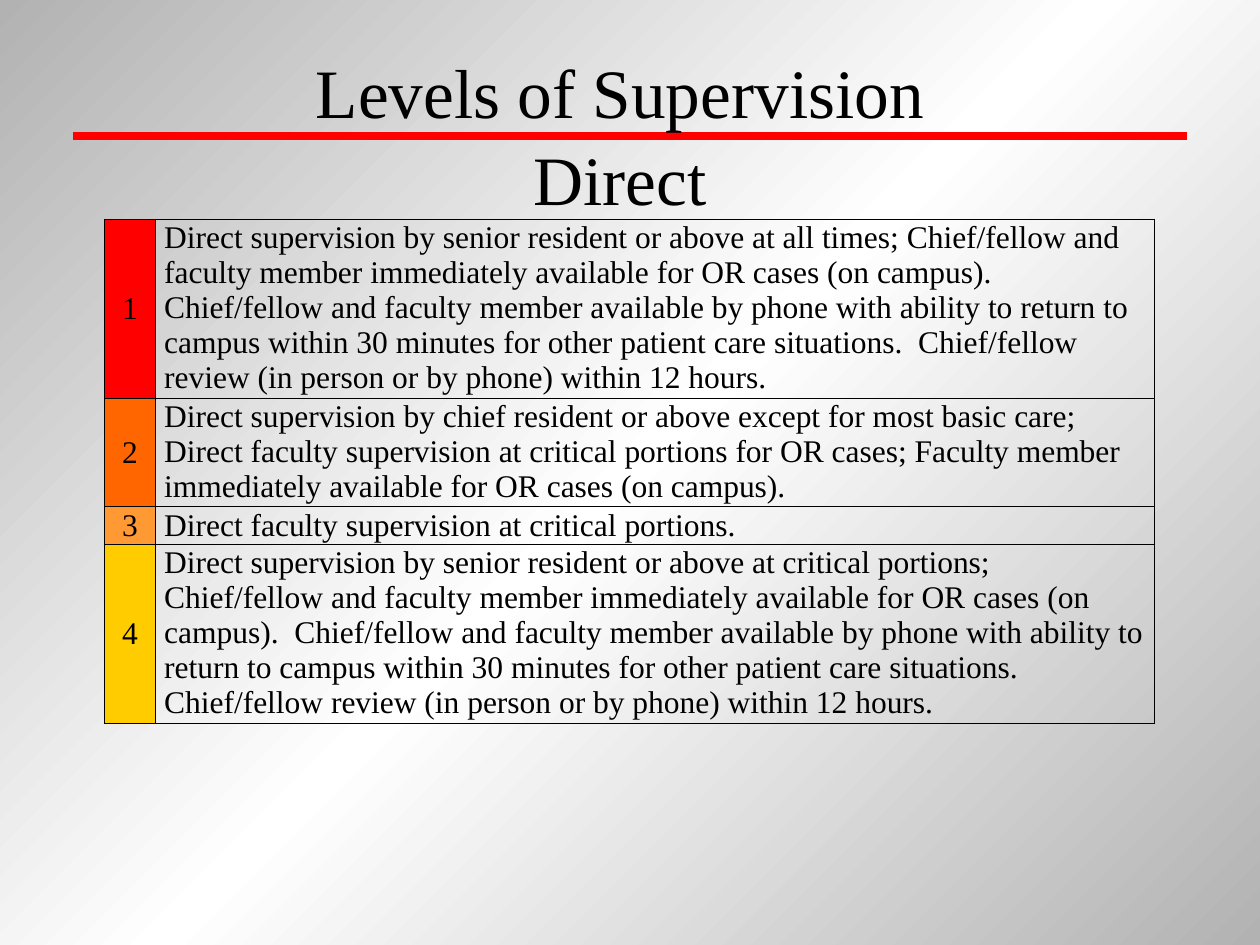
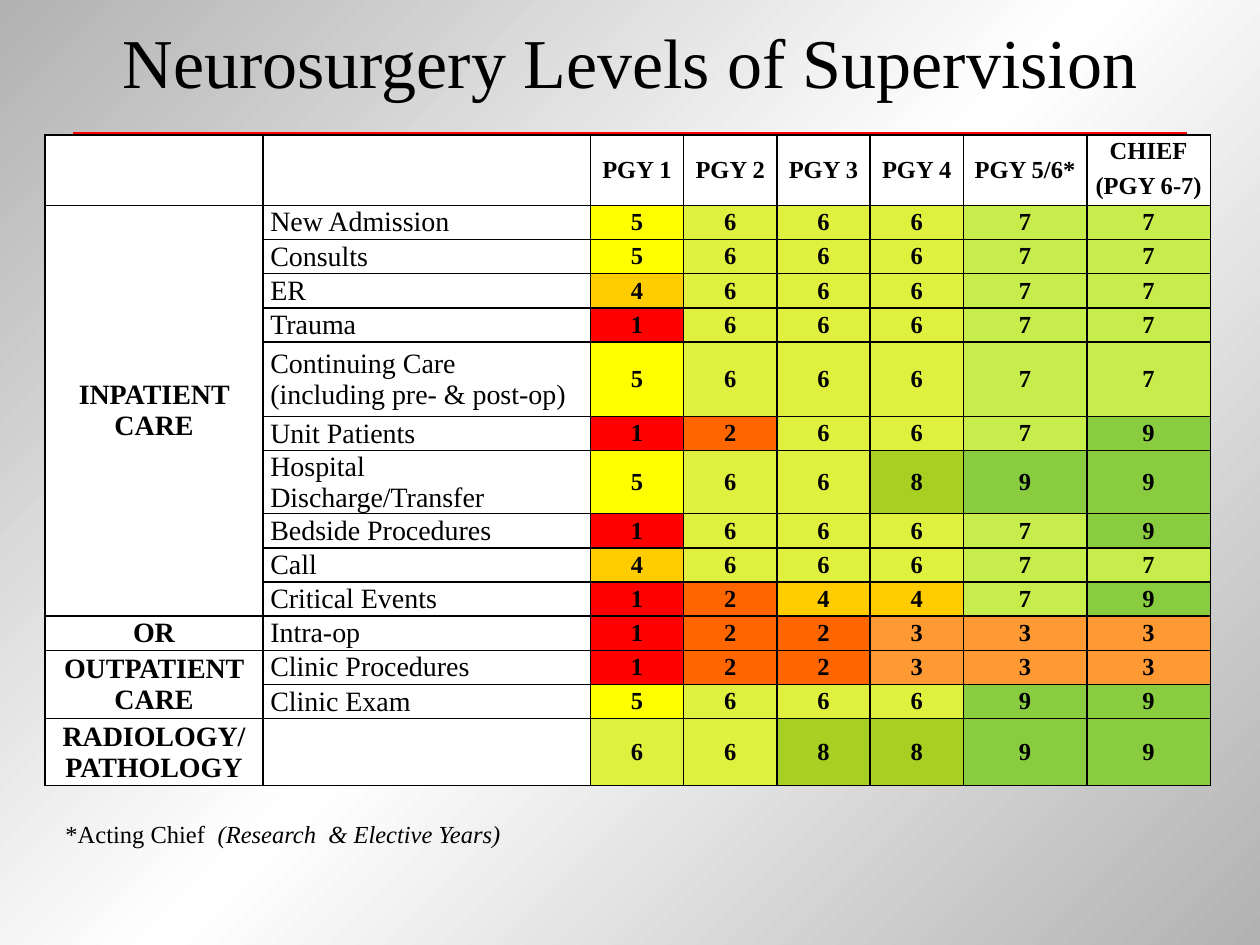
from copy import deepcopy

from lxml.etree import SubElement
from pptx import Presentation
from pptx.dml.color import RGBColor as Rgb
from pptx.enum.shapes import MSO_CONNECTOR as Connector
from pptx.enum.text import MSO_ANCHOR as Anchor, MSO_AUTO_SIZE as AutoSize, PP_ALIGN as Align
from pptx.oxml import parse_xml
from pptx.oxml.ns import nsdecls, qn
from pptx.util import Cm, Pt

COLORS = {"black": "000000", "white": "FFFFFF", "gray": "B2B2B2", "red": "FF0000"}
LEVELS = {"1": "FF0000", "2": "FF6600", "3": "FF9933", "4": "FFCC00", "5": "FFFF00",
          "6": "DFF03E", "7": "C7ED4D", "8": "A7D022", "9": "89CC40"}
FONT = "Times New Roman"


def write(frame, text, size=14, bold=False, align=Align.LEFT, spacing=None, italic_tail=""):
    """Fill a text frame; a newline starts a paragraph, a vertical tab breaks a line."""
    for number, line in enumerate(text.split("\n")):
        para = frame.add_paragraph() if number else frame.paragraphs[0]
        para.text = line
        para.alignment = align
        if spacing:
            para.line_spacing = spacing
        if italic_tail:
            span = para.add_run()
            span.text = italic_tail
            span.font.italic = True
        for span in para.runs:
            span.font.name = FONT
            span.font.size = Pt(size)
            span.font.bold = bold
            span.font.color.rgb = Rgb.from_string(COLORS["black"])
        if not para.runs:  # keeps empty cells from stretching their row
            SubElement(para._p, qn("a:endParaRPr")).set("sz", str(size * 100))


def fill_cell(cell, text, fill=None, anchor=Anchor.MIDDLE, margins=(0.15, 0), sides="LRTB",
              **text_format):
    """Write a table cell and set its margins, borders and fill."""
    write(cell.text_frame, text, **text_format)
    cell.vertical_anchor = anchor
    cell.margin_left = cell.margin_right = Cm(margins[0])
    cell.margin_top = cell.margin_bottom = Cm(margins[1])
    properties = cell._tc.get_or_add_tcPr()
    for position, side in enumerate("LRTB"):
        paint = (f'<a:solidFill><a:srgbClr val="{COLORS["black"]}"/></a:solidFill>'
                 if side in sides else "<a:noFill/>")
        properties.insert(position, parse_xml(
            f'<a:ln{side} {nsdecls("a")} w="12700">{paint}</a:ln{side}>'))
    if fill:
        cell.fill.solid()
        cell.fill.fore_color.rgb = Rgb.from_string(fill)
    else:
        cell.fill.background()


deck = Presentation()
deck.slide_width, deck.slide_height = Cm(25.4), Cm(19.05)
master = deck.slide_master

# Shared diagonal gradient background
background = master.background.fill
background.gradient()
background.gradient_angle = 315
stops = background.gradient_stops
for stop in stops:
    stop.color.rgb = Rgb.from_string(COLORS["gray"])
first_stop = stops[0]._gs
middle_stop = deepcopy(first_stop)
middle_stop.set("pos", "50000")
middle_stop.find(qn("a:srgbClr")).set("val", COLORS["white"])
first_stop.addnext(middle_stop)

# Slides, titles and empty tables
PAGES = [
    dict(title="Levels of Supervision\vDirect", size=39.6, spacing=1.05,
         title_at=(1.07, 1.07, 22.86, 3.18), table_at=(2.11, 4.42),
         columns=[1.02, 20.14], rows=[3.61, 2.18, 0.76, 3.61]),
    dict(title="Neurosurgery Levels of Supervision", size=40, spacing=None,
         title_at=(1.27, 0.76, 22.86, 0.94), table_at=(0.91, 2.72),
         columns=[4.39, 6.6] + [1.88] * 4 + [2.49] * 2,
         rows=[0.66, 0.76] + [0.69] * 4 + [1.5, 0.69, 1.27] + [0.69] * 6 + [1.35]),
]
pages, tables = [], []
for plan in PAGES:
    page = deck.slides.add_slide(deck.slide_layouts[5])
    title = page.shapes.title
    title.left, title.top, title.width, title.height = map(Cm, plan["title_at"])
    title.text_frame.auto_size = AutoSize.NONE
    title.text_frame.vertical_anchor = Anchor.MIDDLE
    write(title.text_frame, plan["title"], size=plan["size"], align=Align.CENTER,
          spacing=plan["spacing"])
    columns, rows = plan["columns"], plan["rows"]
    table = page.shapes.add_table(len(rows), len(columns), *map(Cm, plan["table_at"]),
                                  Cm(sum(columns)), Cm(sum(rows))).table
    table.first_row = table.horz_banding = False
    for column, width in zip(table.columns, columns):
        column.width = Cm(width)
    for row, height in zip(table.rows, rows):
        row.height = Cm(height)
    pages.append(page)
    tables.append(table)

# Shared red rule, moved to the master so that it lies behind everything
rule = pages[0].shapes.add_connector(Connector.STRAIGHT, Cm(1.47), Cm(2.74), Cm(23.93), Cm(2.74))
rule.line.color.rgb = Rgb.from_string(COLORS["red"])
rule.line.width = Pt(5)
SubElement(rule._element.spPr, qn("a:effectLst"))
master.shapes._spTree.append(rule._element)

# Slide 1: what each direct level means
on_call = ("Chief/fellow and faculty member immediately available for OR cases (on campus).  "
           "Chief/fellow and faculty member available by phone with ability to return to campus "
           "within 30 minutes for other patient care situations.  "
           "Chief/fellow review (in person or by phone) within 12 hours.")
MEANINGS = [
    "Direct supervision by senior resident or above at all times; " + on_call,
    "Direct supervision by chief resident or above except for most basic care; Direct faculty "
    "supervision at critical portions for OR cases; Faculty member immediately available for "
    "OR cases (on campus).",
    "Direct faculty supervision at critical portions.",
    "Direct supervision by senior resident or above at critical portions;  " + on_call,
]
for index, meaning in enumerate(MEANINGS):
    level = str(index + 1)
    fill_cell(tables[0].cell(index, 0), level, LEVELS[level], margins=(0.18, 0.03),
              size=18, align=Align.CENTER)
    fill_cell(tables[0].cell(index, 1), meaning, anchor=Anchor.TOP, margins=(0.18, 0.03), size=18)

# Slide 2: level by activity and training year
HEADINGS = ["", "", "PGY 1", "PGY 2", "PGY 3", "PGY 4", "PGY 5/6*", "CHIEF"]
ACTIVITIES = [
    ("INPATIENT CARE", "New Admission", "566677"),
    ("", "Consults", "566677"),
    ("", "ER", "466677"),
    ("", "Trauma", "166677"),
    ("", "Continuing Care\n(including pre- & post-op)", "566677"),
    ("", "Unit Patients", "126679"),
    ("", "Hospital Discharge/Transfer", "566899"),
    ("", "Bedside Procedures", "166679"),
    ("", "Call", "466677"),
    ("", "Critical Events", "124479"),
    ("OR", "Intra-op", "122333"),
    ("OUTPATIENT CARE", "Clinic Procedures", "122333"),
    ("", "Clinic Exam", "566699"),
    ("RADIOLOGY/ PATHOLOGY", "", "668899"),
]
grid = tables[1]
centered = dict(bold=True, align=Align.CENTER)
for column, heading in enumerate(HEADINGS):
    is_chief = heading == "CHIEF"
    fill_cell(grid.cell(0, column), heading, COLORS["white"],
              sides="LRT" if is_chief else "LRTB", **centered)
    fill_cell(grid.cell(1, column), "(PGY 6-7)" if is_chief else "", COLORS["white"],
              sides="LRB" if is_chief else "LRTB", **centered)
for row, (area, activity, levels) in enumerate(ACTIVITIES, start=2):
    fill_cell(grid.cell(row, 0), area, COLORS["white"], size=16, **centered)
    fill_cell(grid.cell(row, 1), activity, COLORS["white"], size=16)
    for column, level in enumerate(levels, start=2):
        fill_cell(grid.cell(row, column), level, LEVELS[level], **centered)

# Merged headings and areas: column, first row, last row
for column, first, last in [(n, 0, 1) for n in range(7)] + [(0, 2, 11), (0, 13, 14)]:
    grid.cell(first, column).merge(grid.cell(last, column))

# Footnote
box = pages[1].shapes.add_textbox(Cm(1.07), Cm(16.38), Cm(23.29), Cm(0.86))
box.text_frame.word_wrap = True
box.text_frame.auto_size = AutoSize.SHAPE_TO_FIT_TEXT
box.text_frame.vertical_anchor = Anchor.MIDDLE
write(box.text_frame, "*Acting Chief  ", italic_tail="(Research  & Elective Years)")

deck.save("out.pptx")
